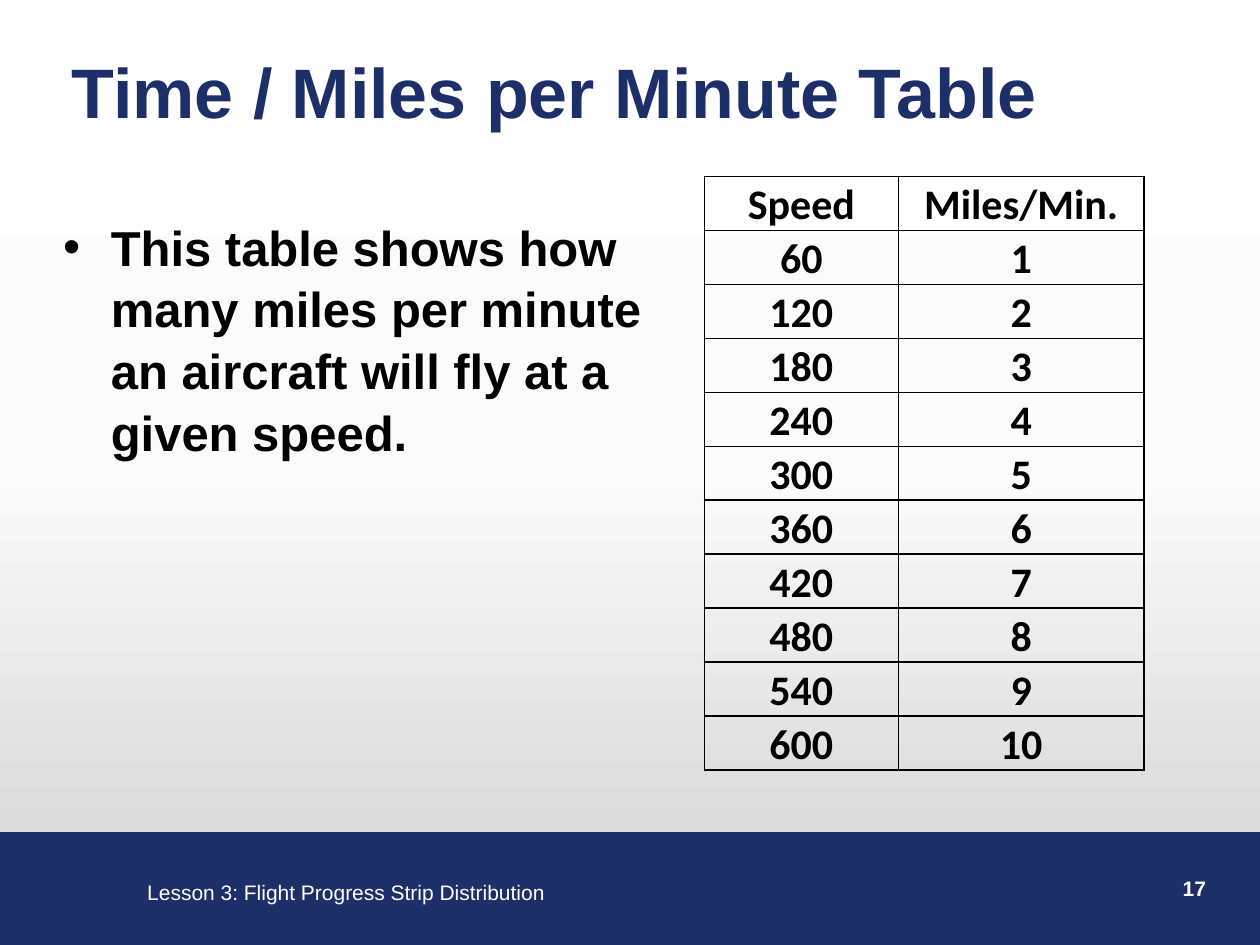
import copy

import lxml.etree
import pptx
import pptx.dml.color
import pptx.enum.shapes
import pptx.enum.text
import pptx.oxml.ns
import pptx.util
from pptx.util import Inches

NAVY, WHITE, BLACK = "1D2F68", "FFFFFF", "000000"
ALIGN = pptx.enum.text.PP_ALIGN
ANCHOR = pptx.enum.text.MSO_ANCHOR


def rgb(value):
    """Return the colour for a hex string."""
    return pptx.dml.color.RGBColor.from_string(value)


def add_element(parent, tag, **attributes):
    """Append a drawing element with its attributes."""
    return lxml.etree.SubElement(parent, pptx.oxml.ns.qn(tag), attributes)


def format_text(paragraph, size, color, bold=False, font="Arial", align=ALIGN.LEFT):
    """Format a paragraph and its runs."""
    paragraph.alignment = align
    for run in paragraph.runs:
        run.font.name = font
        run.font.size = pptx.util.Pt(size)
        run.font.bold = bold
        run.font.color.rgb = rgb(color)


def place(shape, box):
    """Move a shape to a box given in inches."""
    shape.left, shape.top, shape.width, shape.height = map(Inches, box)


def paint_background(slide, stops, angle):
    """Fill the slide with a linear gradient."""
    fill = slide.background.fill
    fill.gradient()
    fill.gradient_angle = angle
    stop_list = next(slide.background._cSld.iter(pptx.oxml.ns.qn("a:gsLst")))
    while len(stop_list) < len(stops):
        stop_list.append(copy.deepcopy(stop_list[0]))
    for stop, (position, color) in zip(fill.gradient_stops, stops):
        stop.position = position
        stop.color.rgb = rgb(color)


def add_label(slide, box, text, wrap=True, **style):
    """Add a line of white footer text."""
    label = slide.shapes.add_textbox(*map(Inches, box))
    label.text_frame.word_wrap = wrap
    label.text_frame.text = text
    format_text(label.text_frame.paragraphs[0], 12, WHITE, **style)


def add_footer(slide, box, lesson, number):
    """Draw the footer band with the lesson name and the slide number."""
    left, top, width, height = box
    band = slide.shapes.add_shape(
        pptx.enum.shapes.MSO_SHAPE.RECTANGLE, *map(Inches, box))
    band.shadow.inherit = False
    band.fill.solid()
    band.fill.fore_color.rgb = rgb(NAVY)
    band.line.color.rgb = rgb(NAVY)
    band.line.width = pptx.util.Pt(0.75)
    add_label(slide, (left + 1.09, top + 0.32, 3.38, 0.3), lesson, wrap=False)
    add_label(slide, (left + width - 2.41, top + 0.29, 2.08, 0.5), number,
              bold=True, align=ALIGN.RIGHT)


def fill_title(slide, box, text):
    """Place and format the title."""
    title = slide.shapes.title
    place(title, box)
    frame = title.text_frame
    frame.text = text
    frame.auto_size = pptx.enum.text.MSO_AUTO_SIZE.NONE
    frame.vertical_anchor = ANCHOR.MIDDLE
    format_text(frame.paragraphs[0], 40, NAVY, bold=True)


def fill_body(slide, box, text):
    """Place and format the bulleted explanation."""
    body = slide.placeholders[1]
    place(body, box)
    frame = body.text_frame
    frame.text = text
    frame.auto_size = pptx.enum.text.MSO_AUTO_SIZE.NONE
    explanation = frame.paragraphs[0]
    indent = Inches(0.38)
    properties = explanation._p.get_or_add_pPr()
    properties.set("marL", str(indent))
    properties.set("indent", str(-indent))
    add_element(properties, "a:buFont", typeface="Arial")
    add_element(properties, "a:buChar", char="•")
    explanation.space_before = pptx.util.Pt(0)
    explanation.line_spacing = 1.05
    format_text(explanation, 28, BLACK, bold=True)


def format_cell(cell, text):
    """Write a centred value in an unfilled, bordered cell."""
    cell.text = text
    cell.vertical_anchor = ANCHOR.MIDDLE
    cell.margin_left = cell.margin_right = Inches(0.07)
    cell.margin_top = cell.margin_bottom = 0
    cell.text_frame.paragraphs[0].line_spacing = 1.07
    format_text(cell.text_frame.paragraphs[0], 24, BLACK, bold=True,
                font="Calibri", align=ALIGN.CENTER)
    properties = cell._tc.get_or_add_tcPr()
    for side in "LRTB":
        border = add_element(properties, f"a:ln{side}", w=str(pptx.util.Pt(1)))
        add_element(add_element(border, "a:solidFill"), "a:srgbClr", val=BLACK)
    cell.fill.background()


def add_speed_table(slide, box, column_widths, rows):
    """Add the table of speeds and miles per minute."""
    table = slide.shapes.add_table(
        len(rows), len(column_widths), *map(Inches, box)).table
    table.first_row = table.horz_banding = False
    for column, width in zip(table.columns, column_widths):
        column.width = Inches(width)
    for row, values in zip(table.rows, rows):
        row.height = Inches(0.4)
        for cell, value in zip(row.cells, values):
            format_cell(cell, value)


def main():
    """Build and save the slide."""
    presentation = pptx.Presentation()
    presentation.slide_width = Inches(10)
    presentation.slide_height = Inches(7.5)
    slide = presentation.slides.add_slide(presentation.slide_layouts[1])
    paint_background(slide, [(0, WHITE), (0.5, "FBFBFB"), (1, "D0D0D0")], 270)
    add_footer(slide, (-0.02, 6.61, 10.02, 0.9),
               "Lesson 3: Flight Progress Strip Distribution", "17")
    fill_title(slide, (0.47, 0.38, 9.27, 0.67), "Time / Miles per Minute Table")
    fill_body(slide, (0.4, 1.65, 4.87, 4.8),
              "This table shows how many miles per minute an aircraft will fly "
              "at a given speed.")
    speeds = [(str(60 * miles), str(miles)) for miles in range(1, 11)]
    add_speed_table(slide, (5.59, 1.4, 3.49, 4.4), (1.54, 1.95),
                    [("Speed", "Miles/Min.")] + speeds)
    presentation.save("out.pptx")


if __name__ == "__main__":
    main()
